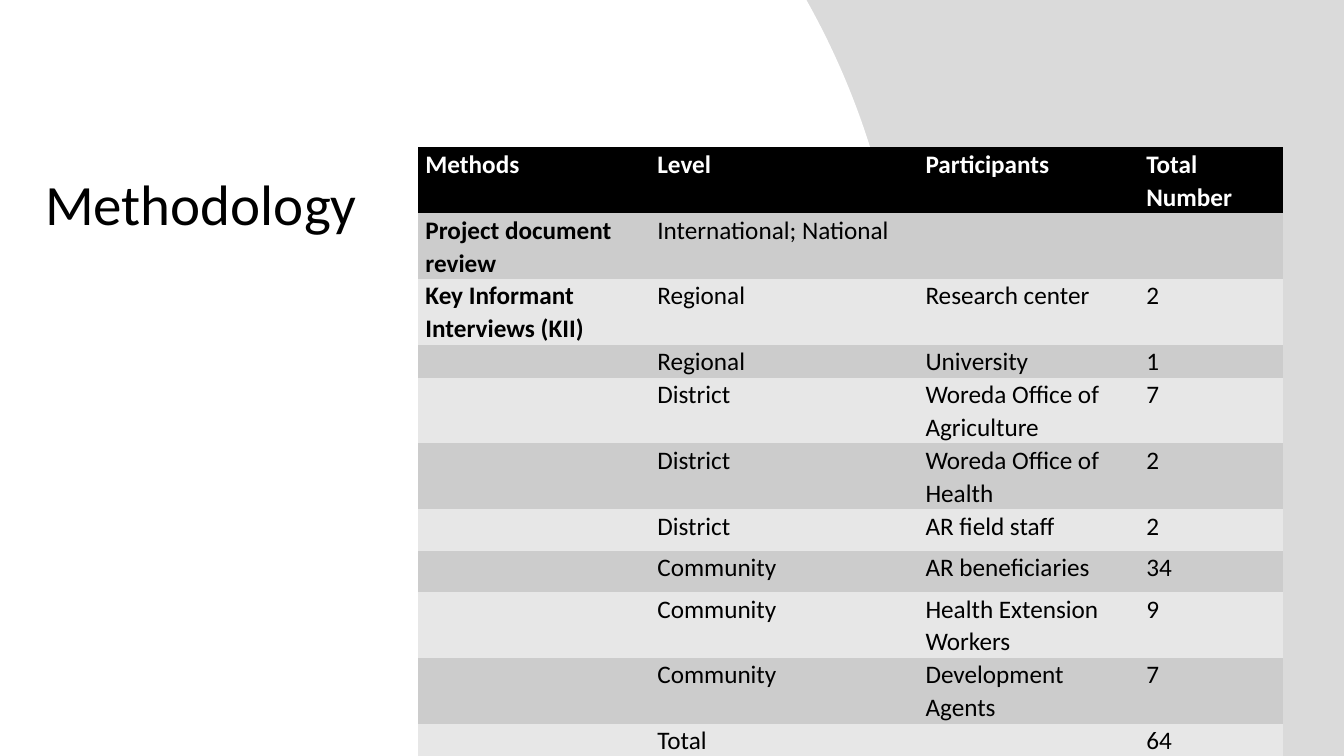
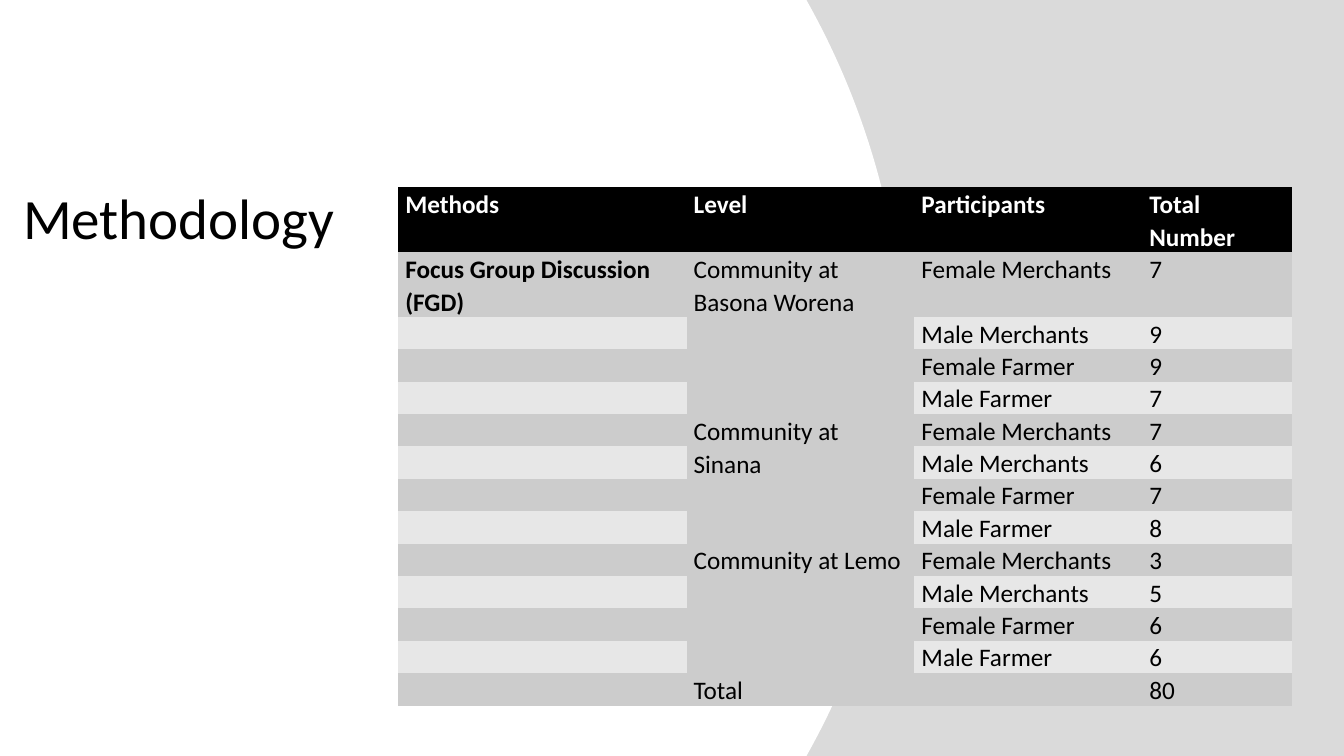
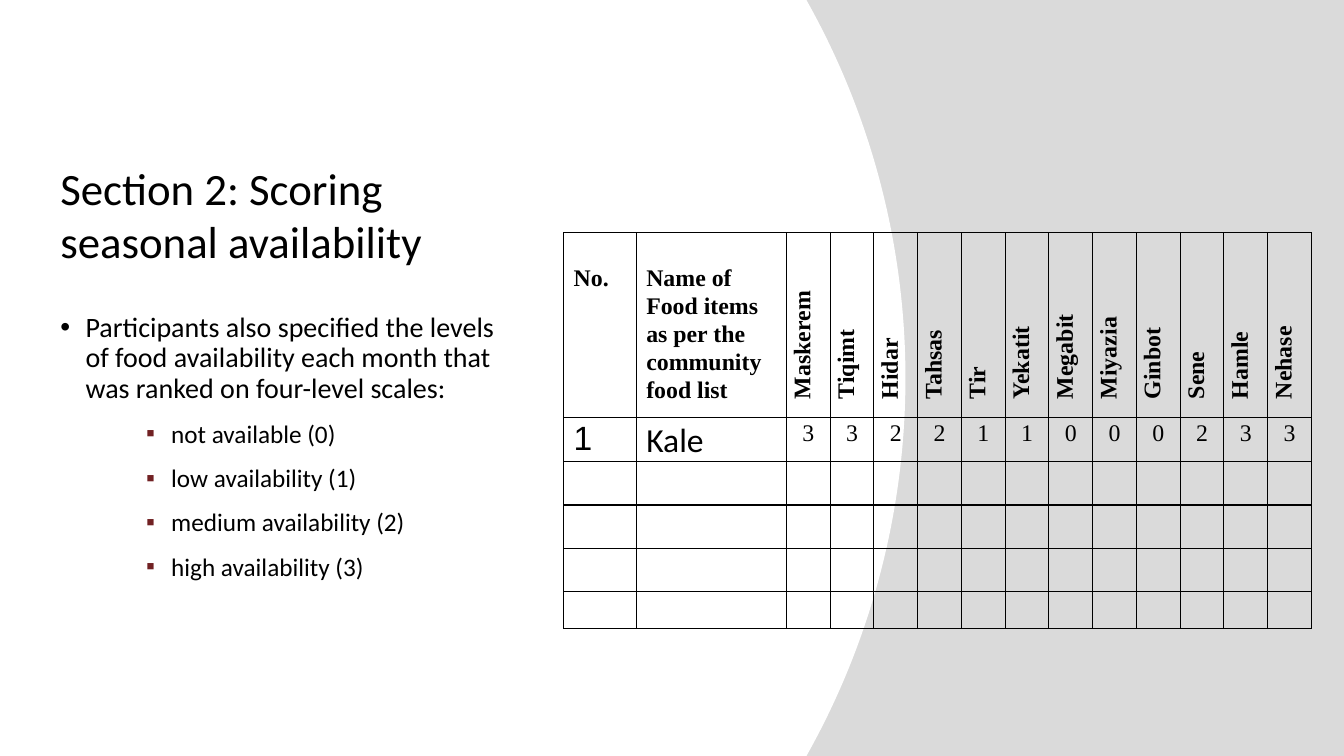
from lxml import etree
from pptx import Presentation
from pptx.dml.color import RGBColor
from pptx.enum.text import MSO_ANCHOR, MSO_AUTO_SIZE, PP_ALIGN
from pptx.oxml import parse_xml
from pptx.oxml.ns import nsdecls, qn
from pptx.util import Inches, Pt

BLACK = RGBColor(0x00, 0x00, 0x00)
WHITE = RGBColor(0xFF, 0xFF, 0xFF)
PALE = RGBColor(0xE7, 0xE7, 0xE7)
SILVER = RGBColor(0xCC, 0xCC, 0xCC)
BACKDROP = RGBColor(0xDA, 0xDA, 0xDA)
MAROON = RGBColor(0x71, 0x21, 0x23)
SANS, SERIF = "Calibri", "Times New Roman"
PLAIN_TABLE = "{2D5ABB26-0587-4C30-8999-92F81FD0307C}"
HEADINGS = ["Methods", "Level", "Participants", "Total Number"]

INTERVIEWS = [
    HEADINGS,
    ["Project document review", "International; National", "", ""],
    ["Key Informant Interviews (KII)", "Regional", "Research center", "2"],
    ["", "Regional", "University", "1"],
    ["", "District", "Woreda Office of Agriculture", "7"],
    ["", "District", "Woreda Office of Health", "2"],
    ["", "District", "AR field staff", "2"],
    ["", "Community", "AR beneficiaries", "34"],
    ["", "Community", "Health Extension Workers", "9"],
    ["", "Community", "Development Agents", "7"],
    ["", "Total", "", "64"],
]
GROUPS = ["Female Merchants", "Male Merchants", "Female Farmer", "Male Farmer"]
DISCUSSIONS = {
    "Community at Basona Worena": [7, 9, 9, 7],
    "Community at Sinana": [7, 6, 7, 8],
    "Community at Lemo": [3, 5, 6, 6],
}
MONTHS = ["Maskerem", "Tiqimt", "Hidar", "Tahsas", "Tir", "Yekatit",
          "Megabit", "Miyazia", "Ginbot", "Sene", "Hamle", "Nehase"]
KALE_SCORES = [3, 3, 2, 2, 1, 1, 0, 0, 0, 2, 3, 3]
SCALE = ["not available (0)", "low availability (1)",
         "medium availability (2)", "high availability (3)"]


def set_all(target, values):
    for name, value in values.items():
        setattr(target, name, value)


class Deck:
    """Hold the shared style and the current slide of the presentation."""

    def __init__(self):
        self.presentation = Presentation()
        set_all(self.presentation, {"slide_width": Inches(13.33), "slide_height": Inches(7.5)})
        self.slide = None

    def add_slide(self):
        self.slide = self.presentation.slides.add_slide(self.presentation.slide_layouts[6])
        self.slide.background.fill.gradient()
        gradient = self.slide.element.find(".//" + qn("a:gradFill"))
        stops = "".join(
            f'<a:gs pos="{position}"><a:srgbClr val="{color}"/></a:gs>'
            for position, color in [(0, WHITE), (100000, WHITE), (100000, BACKDROP)])
        circle = parse_xml(
            f'<a:gradFill {nsdecls("a")} rotWithShape="1"><a:gsLst>{stops}</a:gsLst>'
            '<a:path path="circle"><a:fillToRect l="20000" t="50000" r="100000" b="50000"/>'
            '</a:path></a:gradFill>')
        gradient.getparent().replace(gradient, circle)

    def text_run(self, paragraph, text, size, color=BLACK, bold=False, font=SANS):
        run = paragraph.add_run()
        run.text = text
        set_all(run.font, {"size": Pt(size), "name": font, "bold": bold})
        run.font.color.rgb = color

    def text_frame(self, left, top, width, height, **values):
        box = self.slide.shapes.add_textbox(*map(Inches, (left, top, width, height)))
        set_all(box.text_frame, {"word_wrap": True, **values})
        return box.text_frame

    def title(self, text, left, top, width, height, size=40.7, spacing=0.9, **values):
        frame = self.text_frame(left, top, width, height, **values)
        paragraph = frame.paragraphs[0]
        paragraph.line_spacing = spacing
        self.text_run(paragraph, text, size)

    def bullet(self, paragraph, text, size, mark, indent, color=BLACK):
        properties = paragraph._p.get_or_add_pPr()
        properties.set("marL", str(Inches(indent)))
        properties.set("indent", str(-Inches(0.25)))
        mark_color = etree.SubElement(properties, qn("a:buClr"))
        etree.SubElement(mark_color, qn("a:srgbClr"), val=str(color))
        etree.SubElement(properties, qn("a:buFont"), typeface="Arial")
        etree.SubElement(properties, qn("a:buChar"), char=mark)
        self.text_run(paragraph, text, size)

    def table(self, left, top, columns, rows):
        frame = self.slide.shapes.add_table(
            len(rows), len(columns), Inches(left), Inches(top),
            Inches(sum(columns)), Inches(sum(rows)))
        frame.element.find(".//" + qn("a:tableStyleId")).text = PLAIN_TABLE
        table = frame.table
        set_all(table, {"first_row": False, "horz_banding": False})
        for column, width in zip(table.columns, columns):
            column.width = Inches(width)
        for row, height in zip(table.rows, rows):
            row.height = Inches(height)
        return table

    def cell(self, cell, text, side, top, size, spacing, **style):
        set_all(cell, {"margin_left": Inches(side), "margin_right": Inches(side),
                       "margin_top": Inches(top), "margin_bottom": 0})
        paragraph = cell.text_frame.paragraphs[0]
        paragraph.line_spacing = spacing
        if text:
            self.text_run(paragraph, text, size, **style)
        return paragraph

    def banded_table(self, left, top, columns, heights, rows):
        table = self.table(left, top, columns, heights)
        for row, texts in enumerate(rows):
            fill = (SILVER if row % 2 else PALE) if row else BLACK
            for column, text in enumerate(texts):
                cell = table.cell(row, column)
                self.cell(cell, text, 0.07, 0, 18, 1.07, bold=row == 0 or column == 0,
                          color=BLACK if row else WHITE)
                cell.fill.solid()
                cell.fill.fore_color.rgb = fill
        return table

    def border(self, cell):
        properties = cell._tc.get_or_add_tcPr()
        for side in ("lnL", "lnR", "lnT", "lnB"):
            properties.append(parse_xml(
                f'<a:{side} {nsdecls("a")} w="{Pt(1)}"><a:solidFill>'
                f'<a:srgbClr val="{BLACK}"/></a:solidFill></a:{side}>'))

    def score_table(self, left, top, width):
        month_width = (width - 0.72 - 1.49) / len(MONTHS)
        table = self.table(left, top, [0.72, 1.49] + [month_width] * len(MONTHS),
                           [1.83, 0.44, 0.43, 0.43, 0.43, 0.37])
        names = ["No.", "Name of Food items as per the community food list"] + MONTHS
        scores = ["1", "Kale"] + [str(score) for score in KALE_SCORES]
        for column, (name, score) in enumerate(zip(names, scores)):
            is_month = column > 1
            heading = table.cell(0, column)
            paragraph = self.cell(heading, name, 0.1, 0.01 if is_month else 0.3,
                                  17, 1.06, bold=True, font=SERIF)
            if is_month:
                heading._tc.get_or_add_tcPr().set("vert", "vert270")
                paragraph._p.get_or_add_pPr().set("marL", str(Inches(0.08)))
            font = SERIF if is_month else ["Arial", SANS][column]
            paragraph = self.cell(table.cell(1, column), score, 0.1, 0.01,
                                  17 if is_month else 24, 1.06, font=font)
            paragraph.alignment = PP_ALIGN.CENTER if is_month else PP_ALIGN.LEFT
            for row in range(2, len(table.rows)):
                self.cell(table.cell(row, column), "", 0.1, 0.01, 17, 1.06)
        for cell in table.iter_cells():
            self.border(cell)


def interviews_slide(deck):
    deck.add_slide()
    heights = [0.56, 0.56, 0.56, 0.28, 0.56, 0.56, 0.41, 0.41, 0.56, 0.28, 0.28]
    table = deck.banded_table(4.15, 1.46, [2.3, 2.66, 2.19, 1.43], heights, INTERVIEWS)
    table.cell(1, 1).merge(table.cell(1, 2))
    deck.title("Methodology", 0.35, 1.57, 3.52, 0.96, vertical_anchor=MSO_ANCHOR.MIDDLE)


def discussions_slide(deck):
    deck.add_slide()
    deck.title("Methodology", 0.13, 1.57, 3.52, 1.24, vertical_anchor=MSO_ANCHOR.MIDDLE)
    rows = [HEADINGS]
    for community, counts in DISCUSSIONS.items():
        for index, (group, count) in enumerate(zip(GROUPS, counts)):
            rows.append(["", "" if index else community, group, str(count)])
    rows[1][0] = "Focus Group Discussion (FGD)"
    rows.append(["", "Total", "", "80"])
    heights = [0.3, 0.62] + [0.3] * (len(rows) - 2)
    table = deck.banded_table(3.95, 1.86, [2.86, 2.26, 2.26, 1.48], heights, rows)
    for index in range(len(DISCUSSIONS)):
        first = 1 + index * len(GROUPS)
        table.cell(first, 1).merge(table.cell(first + len(GROUPS) - 1, 1))


def scoring_slide(deck):
    deck.add_slide()
    deck.title("Section 2: Scoring seasonal availability", 0.5, 1.54, 3.93, 1.18,
               size=32, spacing=1.0, auto_size=MSO_AUTO_SIZE.SHAPE_TO_FIT_TEXT)
    deck.score_table(5.59, 2.31, 7.42)
    frame = deck.text_frame(0.5, 3.06, 4.51, 3.29)
    paragraph = frame.paragraphs[0]
    paragraph.line_spacing = 0.9
    deck.bullet(paragraph, "Participants also specified the levels of food availability "
                "each month that was ranked on four-level scales:", 20, "•", 0.25)
    for text in SCALE:
        paragraph = frame.add_paragraph()
        set_all(paragraph, {"level": 2, "space_before": Pt(10)})
        deck.bullet(paragraph, text, 18, "▪", 1.1, MAROON)


def main():
    deck = Deck()
    interviews_slide(deck)
    discussions_slide(deck)
    scoring_slide(deck)
    deck.presentation.save("out.pptx")


if __name__ == "__main__":
    main()
